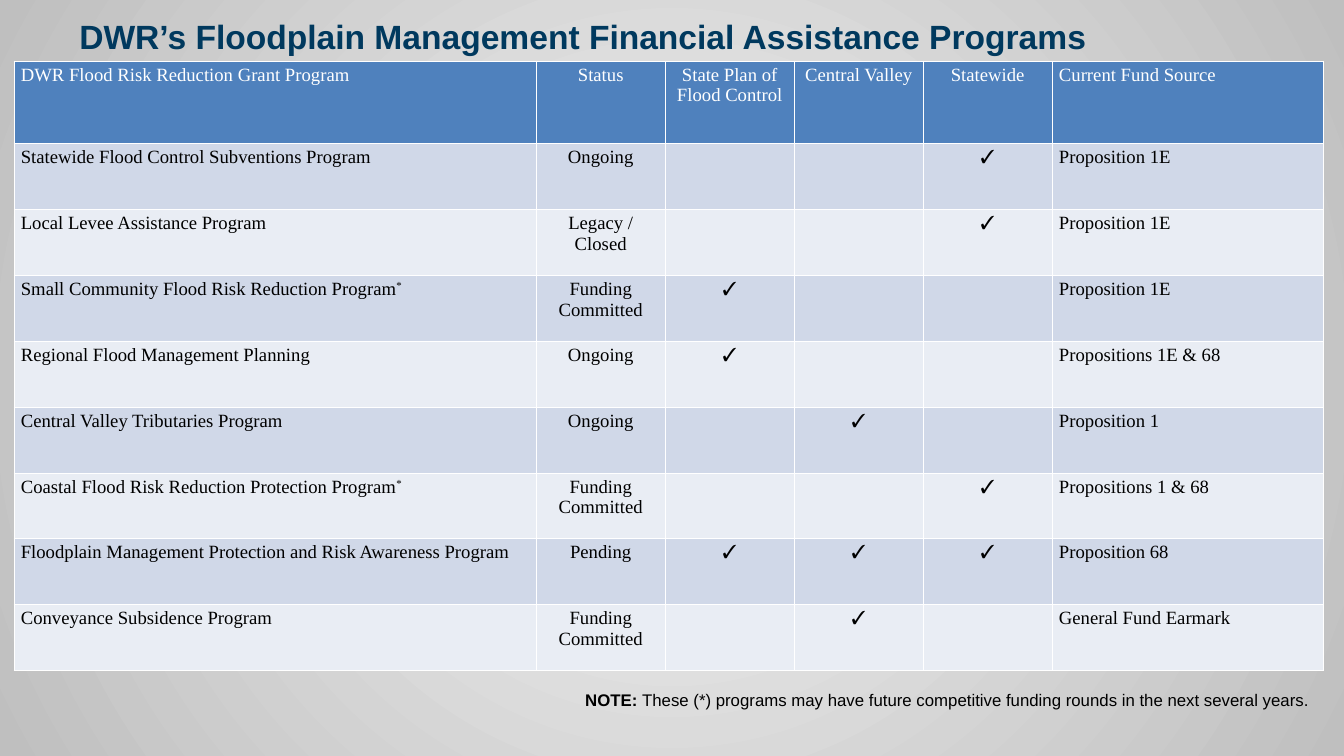
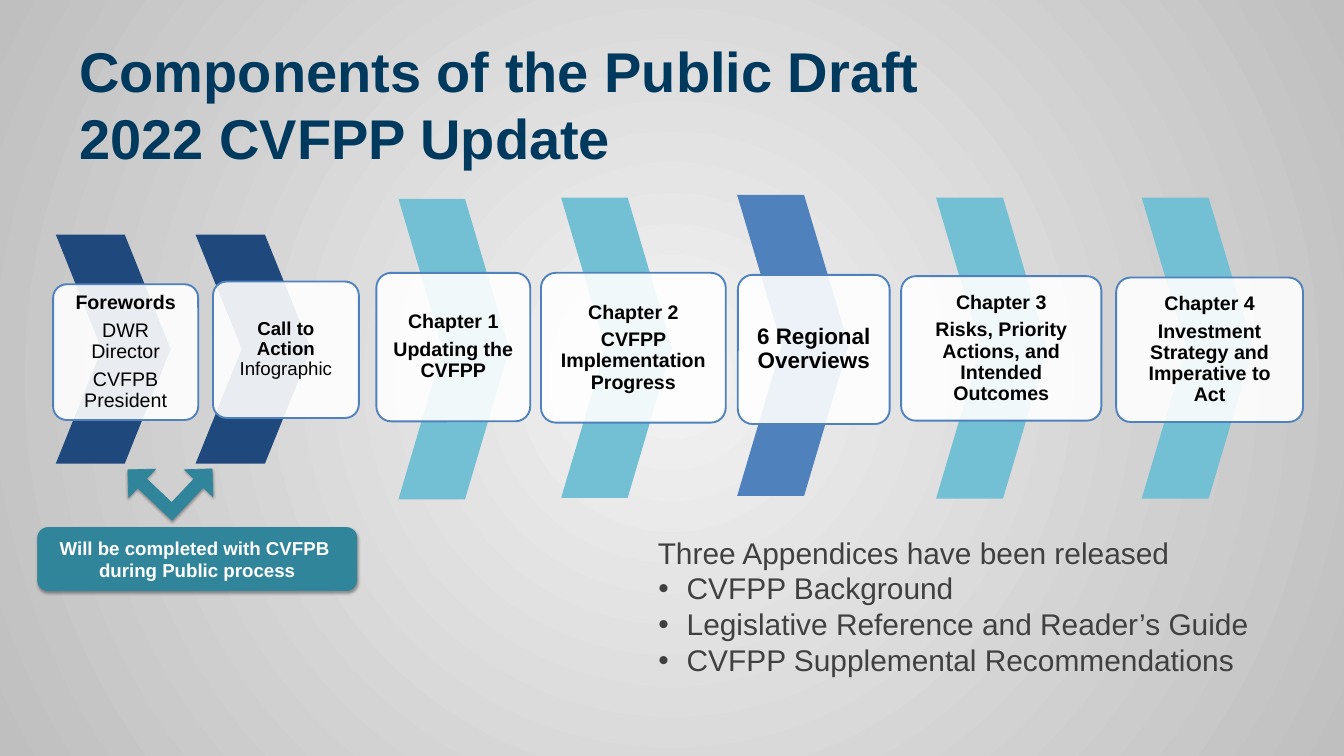
from lxml import etree
from pptx import Presentation
from pptx.dml.color import RGBColor
from pptx.enum.shapes import MSO_SHAPE as Shape
from pptx.enum.text import MSO_ANCHOR as Anchor, PP_ALIGN as Align
from pptx.oxml import parse_xml
from pptx.oxml.ns import nsdecls, qn
from pptx.util import Inches, Pt

COLORS = {
    "navy": "00395E", "blue": "4F81BD", "dark_blue": "1F497D", "aqua": "73BFD3",
    "teal": "31859B", "band_dark": "D0D8E8", "band_light": "E9EDF4",
    "white": "FFFFFF", "black": "000000", "gray": "404040",
    "center": "F2F2F2", "edge": "BFBFBF",
}
TITLE = {"name": "Arial", "bold": True, "color": "navy"}
CELL = {"name": "Times New Roman", "size": Pt(20), "bold": False, "color": "black"}
CARD = {"name": "Arial", "color": "black"}
BODY = {"name": "Arial", "size": Pt(32), "color": "gray"}
NOTE = {"name": "Arial", "size": Pt(18), "color": "black"}
CALLOUT = {"name": "Arial", "size": Pt(20), "bold": True, "color": "white"}
BOLD, PLAIN = {"bold": True}, {"bold": False}
SUPERSCRIPT = {"baseline": "30000"}


def write(frame, paragraphs, font, layout=None, margins=None):
    """Fill a text frame; each paragraph is a list of (text, font changes)."""
    frame.word_wrap = True
    for side, inset in (margins or {}).items():
        setattr(frame, f"margin_{side}", Inches(inset))
    for index, runs in enumerate(paragraphs):
        paragraph = frame.add_paragraph() if index else frame.paragraphs[0]
        for name, value in (layout or {}).items():
            setattr(paragraph, name, value)
        for text, changes in runs:
            run = paragraph.add_run()
            run.text = text
            for name, value in {**font, **changes}.items():
                if name == "color":
                    run.font.color.rgb = RGBColor.from_string(COLORS[value])
                elif name == "baseline":
                    run._r.get_or_add_rPr().set(name, value)
                else:
                    setattr(run.font, name, value)


def add_block(slide, kind, box, fill, line=None, width=0, adjust=()):
    shape = slide.shapes.add_shape(kind, *map(Inches, box))
    shape.shadow.inherit = False
    shape.fill.solid()
    shape.fill.fore_color.rgb = RGBColor.from_string(COLORS[fill])
    if line:
        shape.line.color.rgb = RGBColor.from_string(COLORS[line])
        shape.line.width = Pt(width)
    else:
        shape.line.fill.background()
    for index, value in enumerate(adjust):
        shape.adjustments[index] = value
    return shape


presentation = Presentation()
presentation.slide_width, presentation.slide_height = Inches(20), Inches(11.25)

# Shared background and titles
titles = [
    ("DWR’s Floodplain Management Financial Assistance Programs", (1, 0.14, 18, 1.88), 36),
    ("Components of the Public Draft 2022 CVFPP Update", (1, 0.45, 13.79, 1.88), 60),
]
slides = []
for title, box, size in titles:
    slide = presentation.slides.add_slide(presentation.slide_layouts[6])
    slide.background.fill.gradient()
    gradient = slide.element.find(".//" + qn("a:gradFill"))
    gradient.getparent().replace(gradient, parse_xml(
        f'<a:gradFill {nsdecls("a")} rotWithShape="1"><a:gsLst>'
        f'<a:gs pos="0"><a:srgbClr val="{COLORS["center"]}"/></a:gs>'
        f'<a:gs pos="100000"><a:srgbClr val="{COLORS["edge"]}"><a:alpha val="53000"/>'
        '</a:srgbClr></a:gs></a:gsLst><a:path path="circle">'
        '<a:fillToRect l="50000" t="50000" r="50000" b="50000"/></a:path></a:gradFill>'))
    title_box = slide.shapes.add_textbox(*map(Inches, box))
    write(title_box.text_frame, [[(title, {"size": Pt(size)})]], TITLE,
          margins={"left": 0.18, "right": 0.18, "top": 0.09, "bottom": 0.09})
    slides.append(slide)
programs_slide, components_slide = slides

# Programs table
headers = ["DWR Flood Risk Reduction Grant Program", "Status", "State Plan of Flood Control",
           "Central Valley", "Statewide", "Current Fund Source"]
programs = [
    ("Statewide Flood Control Subventions Program", "Ongoing", "", "", "✓", "Proposition 1E"),
    ("Local Levee Assistance Program", "Legacy / Closed", "", "", "✓", "Proposition 1E"),
    ("Small Community Flood Risk Reduction Program*", "Funding Committed", "✓", "", "",
     "Proposition 1E"),
    ("Regional Flood Management Planning", "Ongoing", "✓", "", "", "Propositions 1E & 68"),
    ("Central Valley Tributaries Program", "Ongoing", "", "✓", "", "Proposition 1"),
    ("Coastal Flood Risk Reduction Protection Program*", "Funding Committed", "", "", "✓",
     "Propositions 1 & 68"),
    ("Floodplain Management Protection and Risk Awareness Program", "Pending", "✓", "✓", "✓",
     "Proposition 68"),
    ("Conveyance Subsidence Program", "Funding Committed", "", "✓", "", "General Fund Earmark"),
]
rows = [headers, *programs]
table = programs_slide.shapes.add_table(
    len(rows), len(headers), *map(Inches, (0.21, 0.91, 19.48, 9.07))).table
for column, width in zip(table.columns, [7.77, *[1.92] * 4, 4.03]):
    column.width = Inches(width)
for row_index, values in enumerate(rows):
    table.rows[row_index].height = Inches(0.98 if row_index else 1.23)
    band = ("band_light", "band_dark")[row_index % 2] if row_index else "blue"
    font = CELL if row_index else {**CELL, "color": "white"}
    for column_index, value in enumerate(values):
        cell = table.cell(row_index, column_index)
        cell.fill.solid()
        cell.fill.fore_color.rgb = RGBColor.from_string(COLORS[band])
        runs = [(value.rstrip("*"), {})] if value else []
        if value.endswith("*"):
            runs.append(("*", SUPERSCRIPT))
        centered = 0 < column_index < len(headers) - 1
        write(cell.text_frame, [runs], font,
              {"alignment": Align.CENTER if centered else Align.LEFT})

# Note under the table
note = programs_slide.shapes.add_textbox(*map(Inches, (8.61, 10.22, 11.09, 0.4)))
write(note.text_frame, [[
    ("NOTE: ", BOLD),
    ("These (*) programs may have future competitive funding rounds in the next several years.",
     PLAIN)]], NOTE)

# Component chevrons with their cards
components = [
    ((0.83, 3.49, 1.71, 3.41), "dark_blue", (0.79, 4.23, 2.16, 2.02), 21,
     [[("Forewords", BOLD)], [("DWR Director", PLAIN)], [("CVFPB President", PLAIN)]]),
    ((2.91, 3.49, 1.72, 3.41), "dark_blue", (3.17, 4.19, 2.17, 2.03), 20,
     [[("Call to Action ", BOLD), ("Infographic", PLAIN)]]),
    ((5.93, 2.96, 1.65, 4.47), "aqua", (5.6, 4.06, 2.29, 2.21), 21,
     [[("Chapter 1", BOLD)], [("Updating the CVFPP", BOLD)]]),
    ((8.35, 2.94, 1.65, 4.47), "aqua", (8.05, 4.06, 2.75, 2.23), 21,
     [[("Chapter 2", BOLD)], [("CVFPP Implementation Progress", BOLD)]]),
    ((10.97, 2.9, 1.66, 4.48), "blue", (10.98, 4.09, 2.26, 2.22), 24,
     [[("6 Regional Overviews", BOLD)]]),
    ((13.93, 2.94, 1.66, 4.48), "aqua", (13.41, 4.11, 2.98, 2.15), 21,
     [[("Chapter 3", BOLD)], [("Risks, Priority Actions, and Intended Outcomes", BOLD)]]),
    ((16.99, 2.94, 1.66, 4.48), "aqua", (16.61, 4.13, 2.78, 2.15), 21,
     [[("Chapter 4", BOLD)], [("Investment Strategy and Imperative to Act", BOLD)]]),
]
for chevron_box, color, card_box, size, paragraphs in components:
    add_block(components_slide, Shape.CHEVRON, chevron_box, color, adjust=[0.4])
    card = add_block(components_slide, Shape.ROUNDED_RECTANGLE, card_box, "white", "blue", 2, [0.1])
    card_color = card.fill._xPr.find(".//" + qn("a:srgbClr"))
    etree.SubElement(card_color, qn("a:alpha")).set("val", "90000")
    card.text_frame.vertical_anchor = Anchor.MIDDLE
    inset = 0.19 if size == 24 else 0.16
    write(card.text_frame, paragraphs, {**CARD, "size": Pt(size)},
          {"alignment": Align.CENTER, "line_spacing": 0.9, "space_after": Pt(7)},
          dict.fromkeys(("left", "right", "top", "bottom"), inset))

# Released appendices
appendices = components_slide.shapes.add_textbox(*map(Inches, (9.69, 7.9, 10, 2.26)))
lines = ["Three Appendices have been released", "CVFPP Background",
         "Legislative Reference and Reader’s Guide", "CVFPP Supplemental Recommendations"]
write(appendices.text_frame, [[(line, {})] for line in lines], BODY)
for paragraph in appendices.text_frame.paragraphs[1:]:
    paragraph.level = 1
    properties = paragraph._p.get_or_add_pPr()
    properties.set("marL", str(Inches(0.43)))
    properties.set("indent", str(Inches(-0.42)))
    etree.SubElement(properties, qn("a:buFont")).set("typeface", "Arial")
    etree.SubElement(properties, qn("a:buChar")).set("char", "•")

# Callout for the first two components
arrow = add_block(components_slide, Shape.LEFT_UP_ARROW, (1.94, 6.61, 1.19, 1.16),
                  "teal", "teal", 0.75, [0.16, 0.25, 0.25])
arrow.rotation = 43.4
callout = add_block(components_slide, Shape.ROUNDED_RECTANGLE, (0.56, 7.85, 4.75, 0.94),
                    "teal", "teal", 0.75)
callout.text_frame.vertical_anchor = Anchor.MIDDLE
write(callout.text_frame, [[("Will be completed with CVFPB ", {})]], CALLOUT,
      {"alignment": Align.CENTER})
callout.text_frame.paragraphs[0].add_line_break()
write(callout.text_frame, [[("during Public process", {})]], CALLOUT)
for shape in (arrow, callout):
    effects = shape.element.spPr.find(qn("a:effectLst"))
    effects.append(parse_xml(
        f'<a:outerShdw {nsdecls("a")} blurRad="{Pt(3.1)}" dist="{Pt(1.8)}" dir="5400000" '
        f'rotWithShape="0"><a:srgbClr val="{COLORS["black"]}"><a:alpha val="35000"/>'
        '</a:srgbClr></a:outerShdw>'))

presentation.save("out.pptx")
